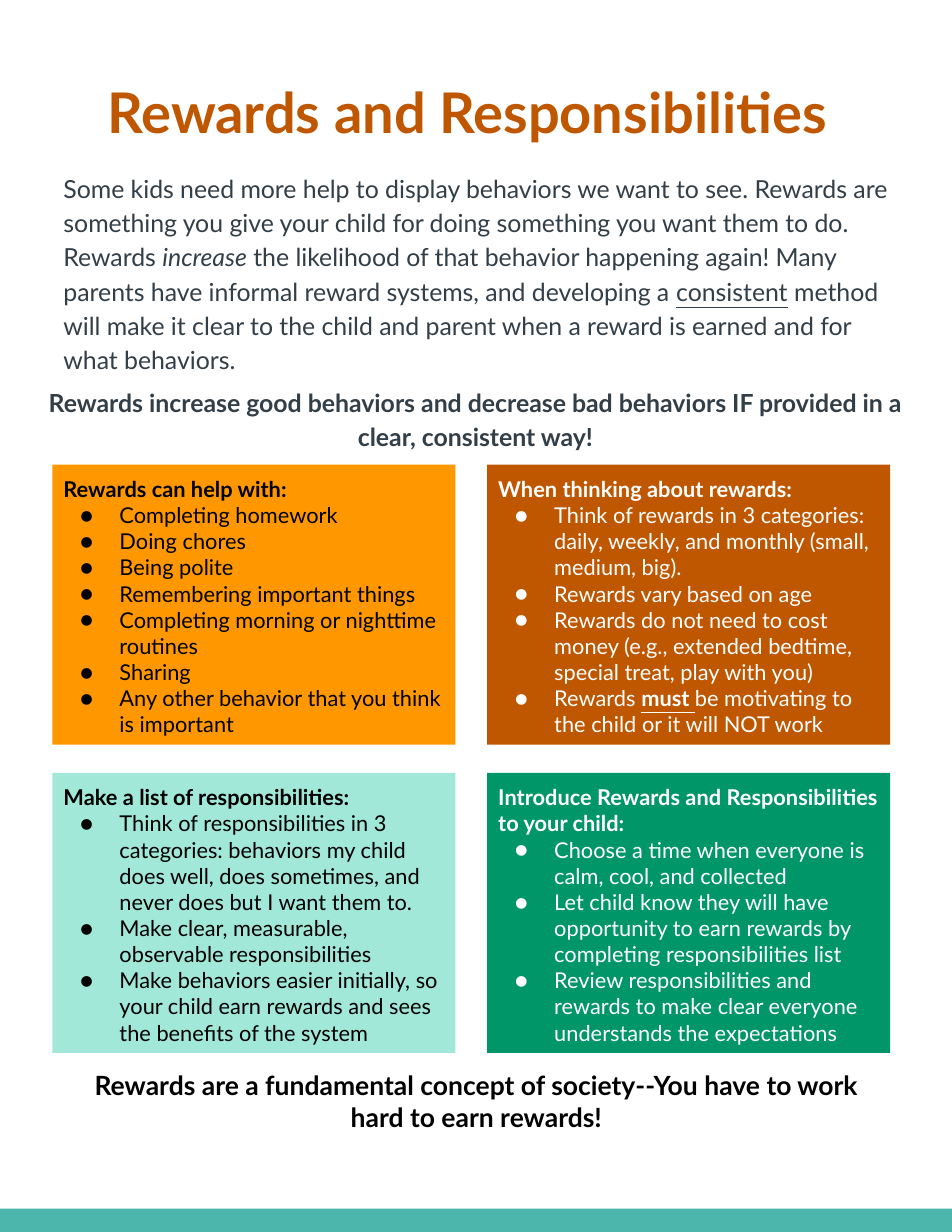
from lxml.etree import SubElement
from pptx import Presentation
from pptx.dml.color import RGBColor
from pptx.enum.shapes import MSO_SHAPE as Shape
from pptx.enum.text import MSO_ANCHOR as Anchor, PP_ALIGN as Align
from pptx.oxml.ns import qn
from pptx.util import Cm, Pt

WHITE = RGBColor(0xFF, 0xFF, 0xFF)
BLACK = RGBColor(0x00, 0x00, 0x00)
SLATE = RGBColor(0x33, 0x3F, 0x48)
RUST = RGBColor(0xBF, 0x57, 0x00)
ORANGE = RGBColor(0xFF, 0x98, 0x00)
MINT = RGBColor(0xA1, 0xE8, 0xD9)
GREEN = RGBColor(0x00, 0x96, 0x68)
TEAL = RGBColor(0x4D, 0xB6, 0xAC)

PAGE_WIDTH, PAGE_HEIGHT = 21.59, 27.94
FOOTER_HEIGHT = 0.53

# Card grid, in centimetres
GRID_LEFT, GRID_TOP = 1.19, 10.54
CARD_WIDTH, CARD_HEIGHT = 9.14, 6.35
COLUMN_STEP, ROW_STEP = 9.86, 6.99

# A paragraph is a list of (text, emphasis) spans
INTRO = [
    ("Some kids need more help to display behaviors we want to see. Rewards are "
     "something you give your child for doing something you want them to do. Rewards ", ""),
    ("increase", "italic"),
    (" the likelihood of that behavior happening again! Many parents have informal "
     "reward systems, and developing a ", ""),
    ("consistent", "underline"),
    (" method will make it clear to the child and parent when a reward is earned "
     "and for what behaviors.", ""),
]

# Fill, text colour, heading, bullets; row by row
CARDS = [
    (ORANGE, BLACK, "Rewards can help with:", [
        "Completing homework",
        "Doing chores",
        "Being polite",
        "Remembering important things",
        "Completing morning or nighttime routines",
        "Sharing",
        "Any other behavior that you think is important",
    ]),
    (RUST, WHITE, "When thinking about rewards:", [
        "Think of rewards in 3 categories: daily, weekly, and monthly (small, medium, big).",
        "Rewards vary based on age",
        "Rewards do not need to cost money (e.g., extended bedtime, special treat, "
        "play with you)",
        [("Rewards ", ""), ("must ", "bold underline"),
         ("be motivating to the child or it will NOT work", "")],
    ]),
    (MINT, BLACK, "Make a list of responsibilities:", [
        "Think of responsibilities in 3 categories: behaviors my child does well, "
        "does sometimes, and never does but I want them to.",
        "Make clear, measurable, observable responsibilities",
        "Make behaviors easier initially, so your child earn rewards and sees the "
        "benefits of the system",
    ]),
    (GREEN, WHITE, "Introduce Rewards and Responsibilities to your child:", [
        "Choose a time when everyone is calm, cool, and collected",
        "Let child know they will have opportunity to earn rewards by completing "
        "responsibilities list",
        "Review responsibilities and rewards to make clear everyone understands "
        "the expectations",
    ]),
]


class Handout:
    font = "Lato"
    inset = Cm(0.25)
    card_size = 14
    bullet_indent, bullet_hang = Cm(1.27), Cm(0.89)

    def __init__(self, page):
        self.page = page

    def add_spans(self, para, content, size, color, bold=False):
        """Fill a paragraph from a string or a list of spans."""
        spans = [(content, "")] if isinstance(content, str) else content
        for text, emphasis in spans:
            span = para.add_run()
            span.text = text
            font = span.font
            font.name, font.size = self.font, Pt(size)
            font.bold = bold or "bold" in emphasis
            font.italic = "italic" in emphasis
            font.underline = "underline" in emphasis
            font.color.rgb = color

    def frame(self, shape, anchor=Anchor.TOP):
        frame = shape.text_frame
        frame.word_wrap = True
        frame.vertical_anchor = anchor
        frame.margin_left = frame.margin_right = self.inset
        frame.margin_top = frame.margin_bottom = self.inset
        return frame

    def text(self, left, top, width, height, content, size, color, bold=True,
             align=Align.CENTER, spacing=None, anchor=Anchor.TOP):
        box = self.page.shapes.add_textbox(Cm(left), Cm(top), Cm(width), Cm(height))
        para = self.frame(box, anchor).paragraphs[0]
        para.alignment = align
        para.line_spacing = spacing
        self.add_spans(para, content, size, color, bold)

    def block(self, left, top, width, height, fill):
        block = self.page.shapes.add_shape(
            Shape.RECTANGLE, Cm(left), Cm(top), Cm(width), Cm(height))
        block.shadow.inherit = False
        block.fill.solid()
        block.fill.fore_color.rgb = fill
        block.line.fill.background()
        return block

    def bullet(self, para, color):
        props = para._p.get_or_add_pPr()
        props.set("marL", str(self.bullet_indent))
        props.set("indent", str(-self.bullet_hang))
        tint = SubElement(props, qn("a:buClr"))
        SubElement(tint, qn("a:srgbClr"), val=str(color))
        SubElement(props, qn("a:buFont"), typeface=self.font)
        SubElement(props, qn("a:buChar"), char="●")

    def card(self, left, top, fill, color, heading, items):
        frame = self.frame(self.block(left, top, CARD_WIDTH, CARD_HEIGHT, fill))
        para = frame.paragraphs[0]
        para.alignment = Align.LEFT
        self.add_spans(para, heading, self.card_size, color, bold=True)
        for item in items:
            para = frame.add_paragraph()
            para.alignment = Align.LEFT
            self.bullet(para, color)
            self.add_spans(para, item, self.card_size, color)


def main():
    deck = Presentation()
    deck.slide_width, deck.slide_height = Cm(PAGE_WIDTH), Cm(PAGE_HEIGHT)
    page = deck.slides.add_slide(deck.slide_layouts[6])
    handout = Handout(page)

    # Footer band
    handout.block(0, PAGE_HEIGHT - FOOTER_HEIGHT, PAGE_WIDTH, FOOTER_HEIGHT, TEAL)

    # Title and introduction
    handout.text(1.19, 1.47, 18.82, 2.08, "Rewards and Responsibilities", 36, RUST,
                 anchor=Anchor.MIDDLE)
    handout.text(1.19, 3.58, 19.66, 4.98, INTRO, 16, SLATE, bold=False,
                 align=Align.LEFT, spacing=1.15)
    handout.text(0.84, 8.43, 19.89, 2.08,
                 "Rewards increase good behaviors and decrease bad behaviors IF "
                 "provided in a clear, consistent way!", 16, SLATE, spacing=1.15)

    # Two by two grid of cards
    for index, card in enumerate(CARDS):
        row, column = divmod(index, 2)
        handout.card(GRID_LEFT + column * COLUMN_STEP, GRID_TOP + row * ROW_STEP, *card)

    # Closing message
    handout.text(1.32, 24, 18.97, 1.3,
                 "Rewards are a fundamental concept of society--You have to work "
                 "hard to earn rewards!", 17, BLACK)

    deck.save("out.pptx")


if __name__ == "__main__":
    main()
